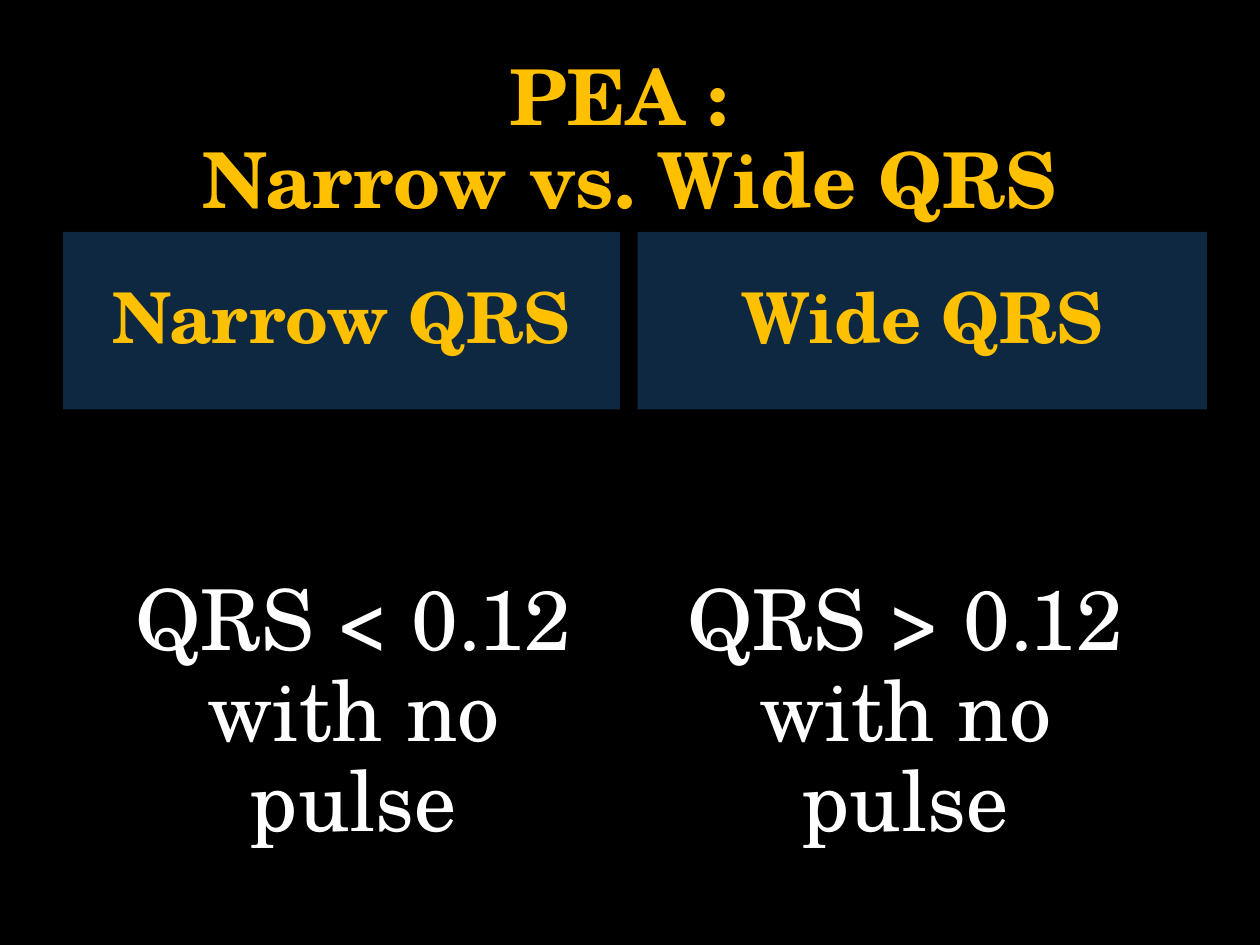
import pptx
import pptx.dml.color
import pptx.enum.shapes
import pptx.enum.text
import pptx.util

Pt = pptx.util.Pt
RGBColor = pptx.dml.color.RGBColor
ANCHOR = pptx.enum.text.MSO_ANCHOR
RECT = pptx.enum.shapes.MSO_SHAPE.RECTANGLE

BLACK = RGBColor(0x00, 0x00, 0x00)
NAVY = RGBColor(0x0E, 0x28, 0x41)
GOLD = RGBColor(0xFF, 0xC0, 0x00)
WHITE = RGBColor(0xFF, 0xFF, 0xFF)
FONT = "TeX Gyre Schola"

# Content: heading and body, each with its left edge and width
TITLE = "PEA : \vNarrow vs. Wide QRS"
COLUMNS = [
    (("Narrow QRS", 36, 318.2), ("QRS < 0.12 with no pulse", 49.7, 304.5)),
    (("Wide QRS", 364.3, 325.4), ("QRS > 0.12 with no pulse", 364.3, 306)),
]
TITLE_BOX = (49.7, 28.8, 620.6, 104.4)
HEAD_TOP, HEAD_HEIGHT = 132.5, 101.5
BODY_TOP, BODY_HEIGHT, BODY_INSET = 197.3, 290.2, 132.9

# Text formats
TITLE_FONT = {"size": Pt(44), "bold": True, "color": GOLD}
HEAD_FONT = {"size": Pt(40), "bold": True, "color": GOLD}
BODY_FONT = {"size": Pt(48), "bold": False, "color": WHITE}


def write(sp, text, font, **frame):
    tf = sp.text_frame
    for name, value in {"word_wrap": True, **frame}.items():
        setattr(tf, name, value)
    p = tf.paragraphs[0]
    p.text = text
    p.alignment = pptx.enum.text.PP_ALIGN.CENTER
    p.line_spacing = 0.9
    for r in p.runs:
        r.font.name = FONT
        for name, value in font.items():
            if name == "color":
                r.font.color.rgb = value
            else:
                setattr(r.font, name, value)


prs = pptx.Presentation()
prs.slide_width, prs.slide_height = Pt(720), Pt(540)
s = prs.slides.add_slide(prs.slide_layouts[6])
s.background.fill.solid()
s.background.fill.fore_color.rgb = BLACK

# Title
sp = s.shapes.add_textbox(*map(Pt, TITLE_BOX))
write(sp, TITLE, TITLE_FONT, vertical_anchor=ANCHOR.MIDDLE)

for (head, head_left, head_width), (body, body_left, body_width) in COLUMNS:
    # Column heading
    sp = s.shapes.add_shape(RECT, Pt(head_left), Pt(HEAD_TOP),
                            Pt(head_width), Pt(HEAD_HEIGHT))
    sp.shadow.inherit = False
    sp.fill.solid()
    sp.fill.fore_color.rgb = NAVY
    sp.line.fill.background()
    write(sp, head, HEAD_FONT, vertical_anchor=ANCHOR.MIDDLE)

    # Column text, set low in its box
    sp = s.shapes.add_textbox(Pt(body_left), Pt(BODY_TOP),
                              Pt(body_width), Pt(BODY_HEIGHT))
    write(sp, body, BODY_FONT, vertical_anchor=ANCHOR.TOP,
          margin_top=Pt(BODY_INSET), margin_bottom=Pt(0))

prs.save("out.pptx")
